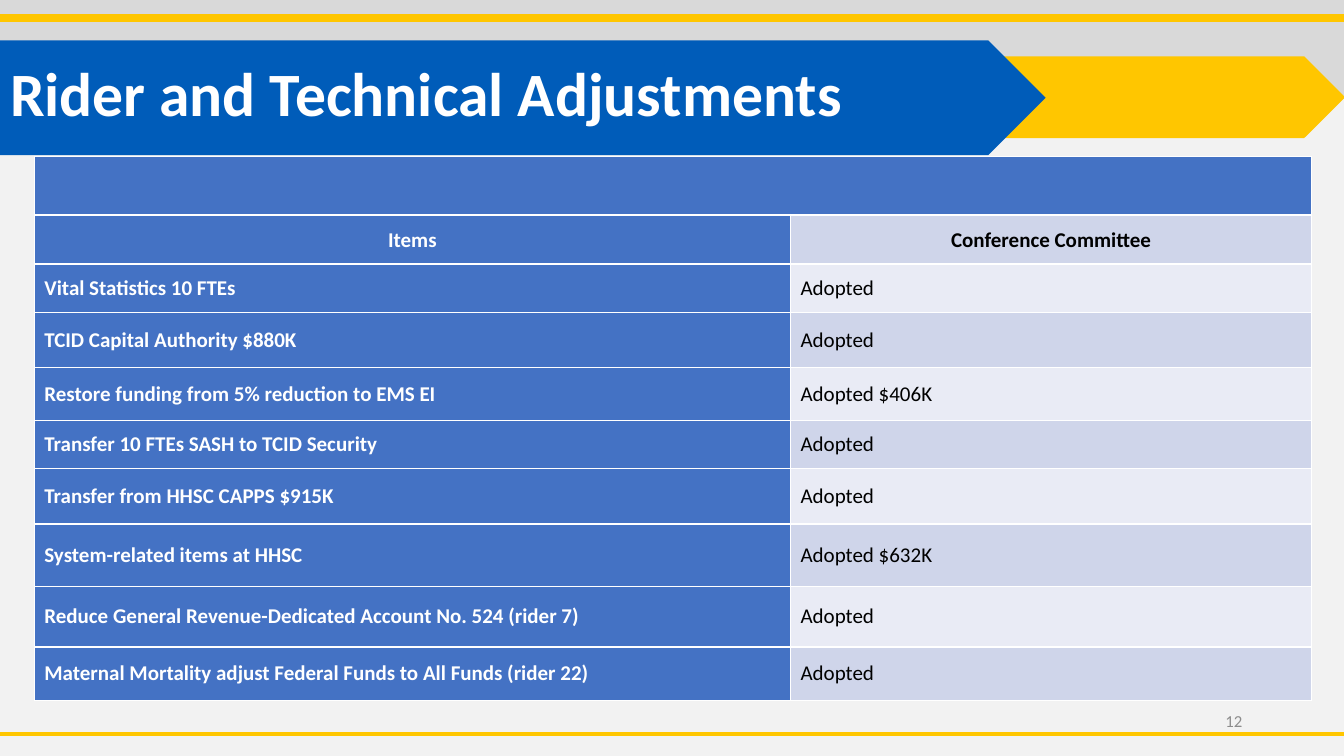
from pptx import Presentation
from pptx.dml.color import RGBColor
from pptx.enum.shapes import MSO_CONNECTOR as LINE, MSO_SHAPE as SHAPE
from pptx.enum.text import MSO_ANCHOR as ANCHOR, MSO_AUTO_SIZE as FIT, PP_ALIGN as ALIGN
from pptx.oxml import parse_xml
from pptx.oxml.ns import nsdecls
from pptx.util import Inches, Pt

WIDTH, HEIGHT = 13.33, 7.5
GOLD, BLUE, GREY, WHITE, BLACK = "FFC600", "005CB9", "D9D9D9", "FFFFFF", "000000"
HEAD, BANDS = "4472C4", ("E9EBF5", "CFD5EA")

COLUMNS = (7.5, 5.17)
ROW_HEIGHTS = (0.58, 0.49, 0.48, 0.55, 0.52, 0.48, 0.55, 0.62, 0.6, 0.53)
ROWS = (
    ("", ""),
    ("Items", "Conference Committee"),
    ("Vital Statistics 10 FTEs", "Adopted"),
    ("TCID Capital Authority $880K", "Adopted"),
    ("Restore funding from 5% reduction to EMS EI", "Adopted $406K"),
    ("Transfer 10 FTEs SASH to TCID Security", "Adopted"),
    ("Transfer from HHSC CAPPS $915K", "Adopted"),
    ("System-related items at HHSC", "Adopted $632K"),
    ("Reduce General Revenue-Dedicated Account No. 524 (rider 7)", "Adopted"),
    ("Maternal Mortality adjust Federal Funds to All Funds (rider 22)", "Adopted"),
)


def rgb(value):
    """Turn a hex string into a colour."""
    return RGBColor.from_string(value)


def write(tf, text, size=15, color=BLACK, bold=False, align=ALIGN.LEFT, spacing=None):
    """Write one formatted paragraph into a text frame."""
    p = tf.paragraphs[0]
    p.alignment = align
    p.line_spacing = spacing
    r = p.add_run()
    r.text = text
    r.font.name = "Calibri"
    r.font.size = Pt(size)
    r.font.bold = bold
    r.font.color.rgb = rgb(color)


class Deck:
    """Holds the presentation, its style and the current slide."""

    def __init__(self):
        """Open a title-only slide with a plain background."""
        self.prs = Presentation()
        self.prs.slide_width, self.prs.slide_height = Inches(WIDTH), Inches(HEIGHT)
        self.s = self.prs.slides.add_slide(self.prs.slide_layouts[5])
        self.s.background.fill.solid()
        self.s.background.fill.fore_color.rgb = rgb("F2F2F2")

    def shape(self, kind, box, color):
        """Add a filled shape without outline."""
        sp = self.s.shapes.add_shape(kind, *map(Inches, box))
        sp.shadow.inherit = False
        sp.fill.solid()
        sp.fill.fore_color.rgb = rgb(color)
        sp.line.fill.background()

    def rule(self, y, weight):
        """Add a gold line across the slide."""
        line = self.s.shapes.add_connector(LINE.STRAIGHT, 0, Inches(y), Inches(WIDTH), Inches(y))
        line.line.color.rgb = rgb(GOLD)
        line.line.width = Pt(weight)
        line.element.spPr.append(parse_xml(f"<a:effectLst {nsdecls('a')}/>"))

    def title(self, text, box):
        """Place the title above the banner shapes."""
        sp = self.s.shapes.title
        sp.left, sp.top, sp.width, sp.height = map(Inches, box)
        sp.element.getparent().append(sp.element)
        tf = sp.text_frame
        tf.auto_size, tf.vertical_anchor, tf.word_wrap = FIT.NONE, ANCHOR.MIDDLE, True
        write(tf, text, size=44, color=WHITE, bold=True, spacing=0.9)

    def text(self, text, box, **style):
        """Add a text box."""
        tf = self.s.shapes.add_textbox(*map(Inches, box)).text_frame
        tf.word_wrap, tf.vertical_anchor = True, ANCHOR.MIDDLE
        write(tf, text, **style)

    def cell(self, cell, row, col, text):
        """Format and fill one table cell."""
        tcPr = cell._tc.get_or_add_tcPr()
        for side in "LRTB":
            weight = 1.5 if (row, side) in ((0, "B"), (1, "T")) else 1
            tcPr.append(parse_xml(
                f'<a:ln{side} {nsdecls("a")} w="{Pt(weight)}"><a:solidFill>'
                f'<a:srgbClr val="{WHITE}"/></a:solidFill></a:ln{side}>'))
        label = col == 0 or row == 0
        cell.fill.solid()
        cell.fill.fore_color.rgb = rgb(HEAD if label else BANDS[row % 2])
        cell.vertical_anchor = ANCHOR.MIDDLE
        if row == 1:
            cell.margin_left = cell.margin_right = cell.margin_top = Inches(0.01)
            cell.margin_bottom = 0
        if text:
            write(cell.text_frame, text, color=WHITE if label else BLACK,
                  bold=label or row == 1, align=ALIGN.CENTER if row == 1 else ALIGN.LEFT)

    def table(self, rows, widths, heights, left, top):
        """Add a table whose first row is one merged band."""
        size = map(Inches, (left, top, sum(widths), sum(heights)))
        table = self.s.shapes.add_table(len(rows), len(widths), *size).table
        for column, width in zip(table.columns, widths):
            column.width = Inches(width)
        for i, (texts, height) in enumerate(zip(rows, heights)):
            table.rows[i].height = Inches(height)
            for j, text in enumerate(texts):
                self.cell(table.cell(i, j), i, j, text)
        table.cell(0, 0).merge(table.cell(0, len(widths) - 1))


def main():
    """Build the slide and save it."""
    deck = Deck()
    deck.shape(SHAPE.RECTANGLE, (0, -0.03, WIDTH, 0.98), GREY)
    deck.shape(SHAPE.PENTAGON, (7.09, 0.56, 6.25, 0.81), GOLD)
    deck.shape(SHAPE.PENTAGON, (0, 0.4, 10.37, 1.14), BLUE)
    deck.rule(7.28, 3)
    deck.rule(0.18, 6)
    deck.title("Rider and Technical Adjustments", (0, 0.23, 11.5, 1.45))
    deck.table(ROWS, COLUMNS, ROW_HEIGHTS, 0.34, 1.55)
    deck.text("12", (9.42, 6.95, 3, 0.4), size=12, color="8C8C8C", align=ALIGN.RIGHT)
    deck.prs.save("out.pptx")


if __name__ == "__main__":
    main()
